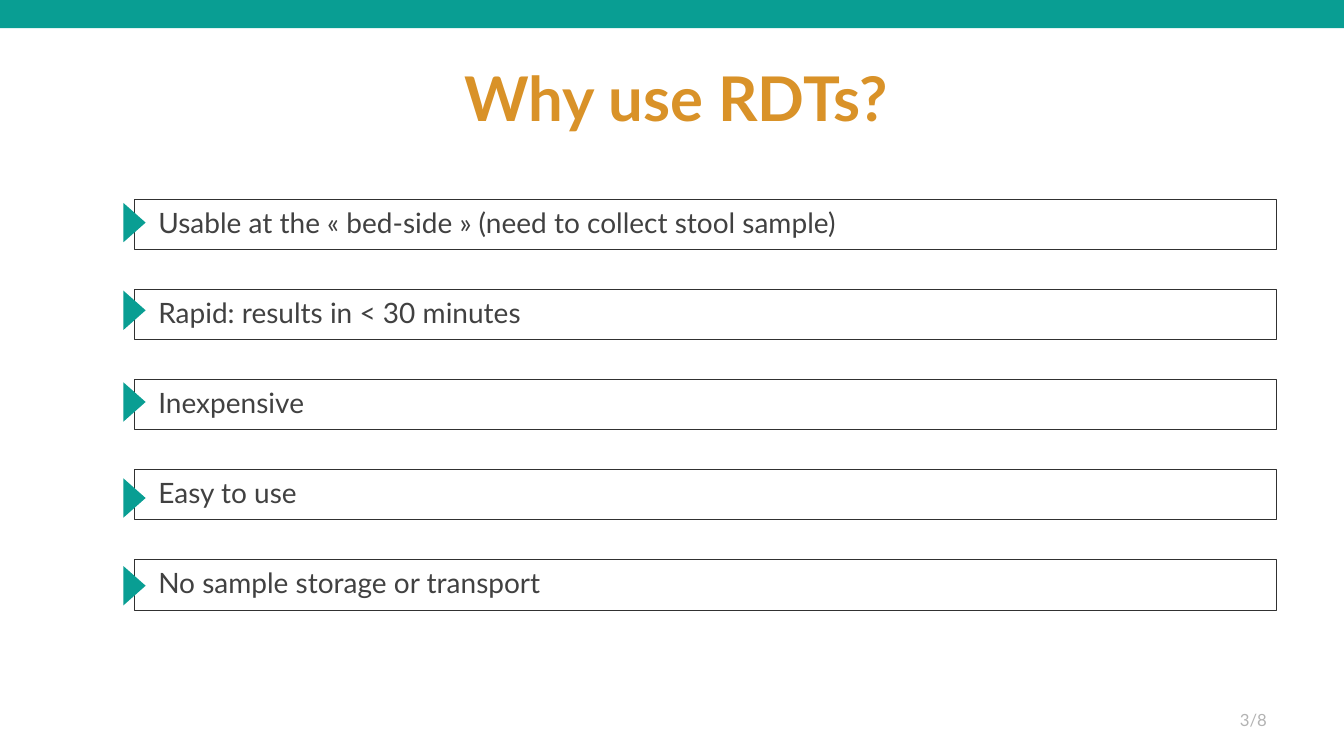
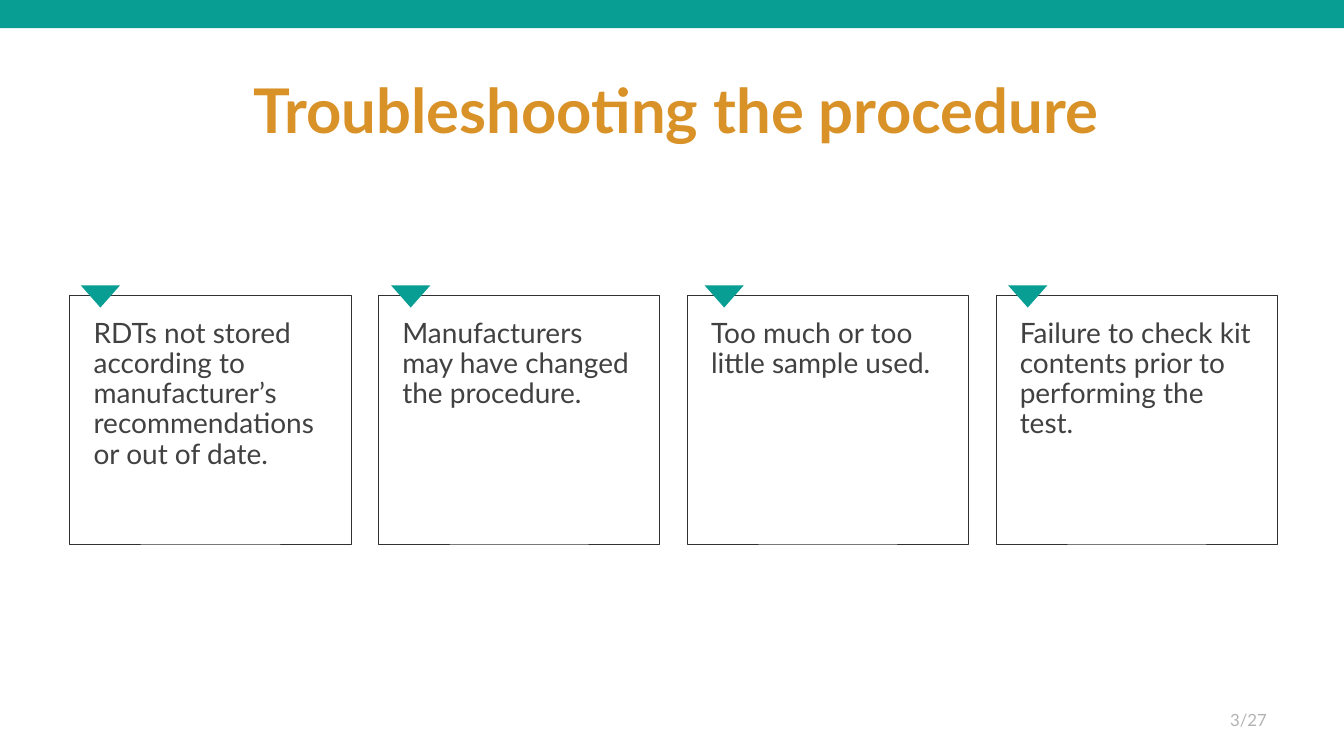
from dataclasses import dataclass

from pptx import Presentation
from pptx.dml.color import RGBColor
from pptx.enum.shapes import MSO_SHAPE as Shape
from pptx.enum.text import MSO_ANCHOR as Anchor, PP_ALIGN as Align
from pptx.util import Cm, Pt


@dataclass(frozen=True)
class Theme:
    font: str = "Lato"
    teal: str = "099E93"
    orange: str = "D99228"
    outline: str = "313131"
    body: str = "414141"
    muted: str = "B3B3B3"
    title_size: int = 44
    body_size: int = 20
    number_size: int = 12
    outline_width: float = 0.5


theme = Theme()


def write(box, text, size=theme.body_size, color=theme.body, bold=False,
          align=Align.LEFT, anchor=Anchor.MIDDLE, inset=(0.25, 0.13), before=0):
    """Fill a box with one formatted paragraph; inset is (sides, top and bottom) in cm."""
    frame = box.text_frame
    frame.word_wrap = True
    frame.vertical_anchor = anchor
    frame.margin_left = frame.margin_right = Cm(inset[0])
    frame.margin_top = frame.margin_bottom = Cm(inset[1])
    para = frame.paragraphs[0]
    para.alignment = align
    para.line_spacing = 0.9
    para.space_before = Pt(before)
    span = para.add_run()
    span.text = text
    span.font.name = theme.font
    span.font.size = Pt(size)
    span.font.bold = bold
    span.font.color.rgb = RGBColor.from_string(color)


def draw(page, kind, left, top, width, height, fill=None, line=None, rotation=0):
    """Add a flat shape, with lengths in cm."""
    shape = page.shapes.add_shape(kind, Cm(left), Cm(top), Cm(width), Cm(height))
    shape.shadow.inherit = False
    shape.rotation = rotation
    if fill:
        shape.fill.solid()
        shape.fill.fore_color.rgb = RGBColor.from_string(fill)
    else:
        shape.fill.background()
    if line:
        shape.line.color.rgb = RGBColor.from_string(line)
        shape.line.width = Pt(theme.outline_width)
    else:
        shape.line.fill.background()
    return shape


deck = Presentation()
deck.slide_width, deck.slide_height = Cm(33.87), Cm(19.05)

# Each item: text and the centre of its marker along the row or column
reasons = [
    ("Usable at the « bed-side » (need to collect stool sample)", 5.61),
    ("Rapid: results in < 30 minutes", 7.82),
    ("Inexpensive", 10.13),
    ("Easy to use", 12.55),
    ("No sample storage or transport", 14.76),
]
problems = [
    ("RDTs not stored according to manufacturer’s recommendations or out of date.", 2.53),
    ("Manufacturers may have changed the procedure.", 10.35),
    ("Too much or too little sample used.", 18.25),
    ("Failure to check kit contents prior to performing the test.", 25.9),
]

# Each slide: heading and its top, page number, items, first box, step between
# boxes, fixed marker coordinate (x or y), marker rotation, text anchor
slides = [
    ("Why use RDTs?", 0.71, "3/8", reasons,
     (3.39, 5.02, 28.78, 1.27), (0, 2.27), (3.39, None), 90, Anchor.MIDDLE),
    ("Troubleshooting the procedure", 1.02, "3/27", problems,
     (1.76, 7.44, 7.09, 6.27), (7.78, 0), (None, 7.47), 180, Anchor.TOP),
]
marker_width, marker_height = 0.99, 0.56

for (heading, heading_top, number, items, first_box, step,
     marker_line, rotation, anchor) in slides:
    page = deck.slides.add_slide(deck.slide_layouts[6])

    # Top band and title
    draw(page, Shape.RECTANGLE, -0.2, -0.23, 34.29, 0.94, fill=theme.teal)
    title = page.shapes.add_textbox(Cm(2.44), Cm(heading_top), Cm(29.21), Cm(3.68))
    write(title, heading, size=theme.title_size, color=theme.orange, bold=True,
          align=Align.CENTER)

    # Outlined text boxes
    left, top, width, height = first_box
    for index, (text, _) in enumerate(items):
        box = draw(page, Shape.RECTANGLE, left + index * step[0], top + index * step[1],
                   width, height, line=theme.outline)
        write(box, text, anchor=anchor, inset=(0.6, 0.6), before=10)

    # Triangular markers on the box edges
    for _, centre in items:
        x, y = (centre if fixed is None else fixed for fixed in marker_line)
        draw(page, Shape.ISOSCELES_TRIANGLE, x - marker_width / 2, y - marker_height / 2,
             marker_width, marker_height, fill=theme.teal, rotation=rotation)

    # Page number
    footer = page.shapes.add_textbox(Cm(24.56), Cm(17.65), Cm(7.62), Cm(1.02))
    write(footer, number, size=theme.number_size, color=theme.muted, align=Align.RIGHT)

deck.save("out.pptx")
